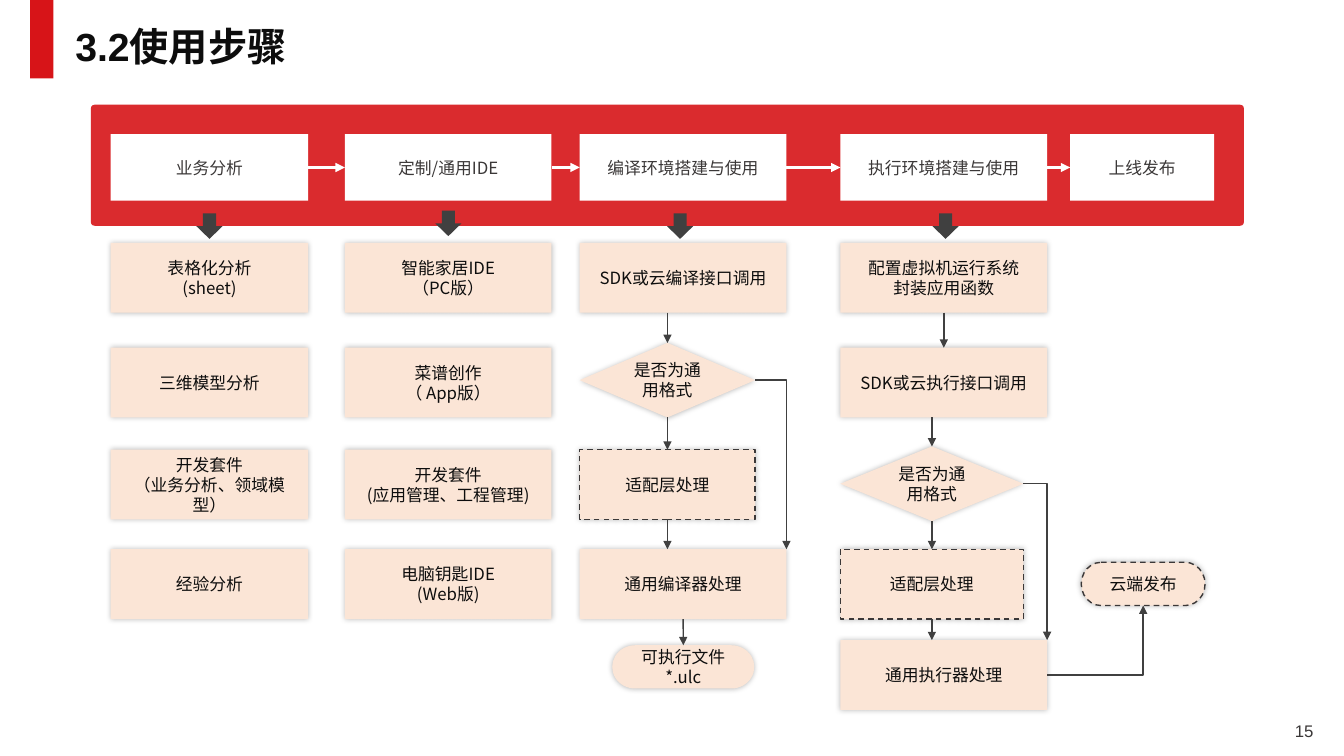
from pptx import Presentation
from pptx.dml.color import RGBColor
from pptx.enum.dml import MSO_LINE
from pptx.enum.shapes import MSO_CONNECTOR, MSO_SHAPE
from pptx.enum.text import MSO_ANCHOR, PP_ALIGN
from pptx.oxml.ns import qn
from pptx.util import Cm, Pt
from lxml.etree import SubElement

RED = RGBColor(0xD7, 0x14, 0x18)
WHITE = RGBColor(0xFF, 0xFF, 0xFF)
PEACH = RGBColor(0xFB, 0xE5, 0xD6)
INK = RGBColor(0x0D, 0x0D, 0x0D)
SLATE = RGBColor(0x3B, 0x38, 0x38)
ARROW = RGBColor(0x40, 0x40, 0x40)
LATIN_FONT = "Arial"
CJK_FONT = "Noto Sans CJK SC"

BOX_HEIGHT = 1.76
DIAMOND_HEIGHT = 1.88
END_HEIGHT = 1.09
ROW_TOPS = [6.12, 8.76, 11.33, 13.84]
TOUCH = Cm(0.05)

# Left, width and heading of each stage
STAGES = [
    (2.79, 4.98, "业务分析"),
    (8.69, 5.21, "定制/通用IDE"),
    (14.61, 5.21, "编译环境搭建与使用"),
    (21.18, 5.21, "执行环境搭建与使用"),
    (26.97, 3.63, "上线发布"),
]
ANALYSIS = [["表格化分析", "(sheet)"], ["三维模型分析"],
            ["开发套件", "（业务分析、领域模型）"], ["经验分析"]]
TOOLS = [["智能家居IDE", "（PC版）"], ["菜谱创作", "（ App版）"],
         ["开发套件", "(应用管理、工程管理)"], ["电脑钥匙IDE", "(Web版)"]]


def write(shape, lines, size=12, color=INK, font=CJK_FONT, bold=False, align=PP_ALIGN.CENTER):
    frame = shape.text_frame
    frame.word_wrap = True
    frame.vertical_anchor = MSO_ANCHOR.MIDDLE
    frame.text = "\n".join(lines)
    for paragraph in frame.paragraphs:
        paragraph.alignment = align
        paragraph.font.size = Pt(size)
        paragraph.font.bold = bold
        paragraph.font.color.rgb = color
        paragraph.font.name = font
        properties = paragraph._p.pPr.find(qn("a:defRPr"))
        SubElement(properties, qn("a:ea"), typeface=CJK_FONT)


def add_block(slide, kind, left, top, width, height, fill):
    shape = slide.shapes.add_shape(kind, Cm(left), Cm(top), Cm(width), Cm(height))
    shape.shadow.inherit = False
    shape.fill.solid()
    shape.fill.fore_color.rgb = fill
    shape.line.fill.background()
    return shape


def add_step(slide, lines, left, top, width, height=BOX_HEIGHT,
             kind=MSO_SHAPE.RECTANGLE, dashed=False):
    shape = add_block(slide, kind, left, top, width, height, PEACH)
    if dashed:
        shape.line.color.rgb = SLATE
        shape.line.width = Pt(1)
        shape.line.dash_style = MSO_LINE.DASH
    # Soft glow-like shadow
    effects = shape._element.spPr.find(qn("a:effectLst"))
    shadow = SubElement(effects, qn("a:outerShdw"), blurRad=str(Pt(4)), dist="0",
                        algn="ctr", rotWithShape="0")
    black = SubElement(shadow, qn("a:srgbClr"), val="000000")
    SubElement(black, qn("a:alpha"), val="26000")
    write(shape, lines)
    return shape


def add_arrow(slide, start, end, color=ARROW, width=1, bent=False):
    kind = MSO_CONNECTOR.ELBOW if bent else MSO_CONNECTOR.STRAIGHT
    connector = slide.shapes.add_connector(kind, *start, *end)
    connector.line.color.rgb = color
    connector.line.width = Pt(width)
    properties = connector._element.spPr
    if bent:
        properties.find(qn("a:prstGeom")).set("prst", "bentConnector2")
    SubElement(properties.find(qn("a:ln")), qn("a:tailEnd"), type="triangle")
    SubElement(properties, qn("a:effectLst"))
    return connector


def middle(shape):
    return shape.left + shape.width // 2


def add_drop(slide, upper, lower):
    """Vertical arrow on the axis of the narrower of two shapes."""
    axis = middle(min(upper, lower, key=lambda shape: shape.width))
    arrow = add_arrow(slide, (axis, upper.top + upper.height), (axis, lower.top))
    if abs(middle(upper) - axis) < TOUCH:
        arrow.begin_connect(upper, 2)
    if abs(middle(lower) - axis) < TOUCH:
        arrow.end_connect(lower, 0)


def draw_title(slide, left, top, width, height):
    add_block(slide, MSO_SHAPE.RECTANGLE, left - 0.89, 0, 0.59, 1.98, RED)
    title = slide.shapes.add_textbox(Cm(left), Cm(top), Cm(width), Cm(height))
    write(title, ["3.2使用步骤"], 28, INK, LATIN_FONT, True, PP_ALIGN.LEFT)
    title.text_frame.paragraphs[0].line_spacing = 0.9


def draw_stage_band(slide, left, top, width, height):
    band = add_block(slide, MSO_SHAPE.ROUNDED_RECTANGLE, left, top, width, height, RED)
    band.adjustments[0] = 0.032
    color = band._element.spPr.find(qn("a:solidFill"))[0]
    SubElement(color, qn("a:alpha"), val="90000")
    # Stage headings joined by white arrows
    previous = None
    for stage_left, stage_width, heading in STAGES:
        stage = add_block(slide, MSO_SHAPE.RECTANGLE, stage_left, top + 0.74,
                          stage_width, 1.68, WHITE)
        write(stage, [heading], color=SLATE)
        if previous:
            arrow = add_arrow(slide, (0, 0), (0, 0), WHITE, 2.25)
            arrow.begin_connect(previous, 3)
            arrow.end_connect(stage, 1)
        previous = stage


def draw_down_arrows(slide, top):
    for left, lift in [(4.95, 0), (10.97, 0.07), (16.81, 0), (23.5, 0)]:
        add_block(slide, MSO_SHAPE.DOWN_ARROW, left, top - lift, 0.66, 0.64, ARROW)


def draw_list(slide, left, width, steps):
    for top, lines in zip(ROW_TOPS, steps):
        add_step(slide, lines, left, top, width)


def draw_branch(slide, left, width, tops, narrow, call, processor):
    """Call, format check, optional adapter and processor; returns call and processor."""
    call_top, check_top, adapter_top, processor_top = tops
    first = add_step(slide, [call], left, call_top, width)
    check = add_step(slide, ["是否为通用格式"], left, check_top, narrow,
                     DIAMOND_HEIGHT, MSO_SHAPE.FLOWCHART_DECISION)
    adapter = add_step(slide, ["适配层处理"], left, adapter_top, narrow, dashed=True)
    last = add_step(slide, [processor], left, processor_top, width)
    for upper, lower in [(first, check), (check, adapter), (adapter, last)]:
        add_drop(slide, upper, lower)
    # Bypass for the general format
    add_arrow(slide, (check.left + check.width, check.top + check.height // 2),
              (last.left + last.width, last.top), bent=True)
    return first, last


def draw_compile(slide, left, width):
    tops = [ROW_TOPS[0], 8.64, ROW_TOPS[2], ROW_TOPS[3]]
    _, compiler = draw_branch(slide, left, width, tops, 4.42,
                              "SDK或云编译接口调用", "通用编译器处理")
    program = add_step(slide, ["可执行文件*.ulc"], left + 0.82, 16.26, 3.58, END_HEIGHT,
                       MSO_SHAPE.FLOWCHART_TERMINATOR)
    add_drop(slide, compiler, program)


def draw_execute(slide, left, width):
    setup = add_step(slide, ["配置虚拟机运行系统", "封装应用函数"], left, ROW_TOPS[0], width)
    tops = [ROW_TOPS[1], 11.25, ROW_TOPS[3], 16.13]
    call, executor = draw_branch(slide, left, width, tops, 4.61,
                                 "SDK或云执行接口调用", "通用执行器处理")
    add_drop(slide, setup, call)
    # Cloud release
    cloud = add_step(slide, ["云端发布"], left + 6.07, 14.17, 3.12, END_HEIGHT,
                     MSO_SHAPE.FLOWCHART_TERMINATOR, dashed=True)
    add_arrow(slide, (executor.left + executor.width, executor.top + executor.height // 2),
              (middle(cloud), cloud.top + cloud.height), bent=True)


def draw_page_number(slide, left, top, width, height):
    number = slide.shapes.add_textbox(Cm(left), Cm(top), Cm(width), Cm(height))
    write(number, ["15"], color=SLATE, font=LATIN_FONT, align=PP_ALIGN.RIGHT)


def main():
    presentation = Presentation()
    presentation.slide_width, presentation.slide_height = Cm(33.87), Cm(19.05)
    slide = presentation.slides.add_slide(presentation.slide_layouts[6])
    draw_title(slide, 1.65, 0.62, 29.21, 1.24)
    draw_stage_band(slide, 2.29, 2.64, 29.06, 3.05)
    draw_list(slide, *STAGES[0][:2], ANALYSIS)
    draw_list(slide, *STAGES[1][:2], TOOLS)
    draw_compile(slide, *STAGES[2][:2])
    draw_execute(slide, *STAGES[3][:2])
    draw_down_arrows(slide, 5.38)
    draw_page_number(slide, 25.73, 17.9, 7.62, 1.02)
    presentation.save("out.pptx")


if __name__ == "__main__":
    main()
